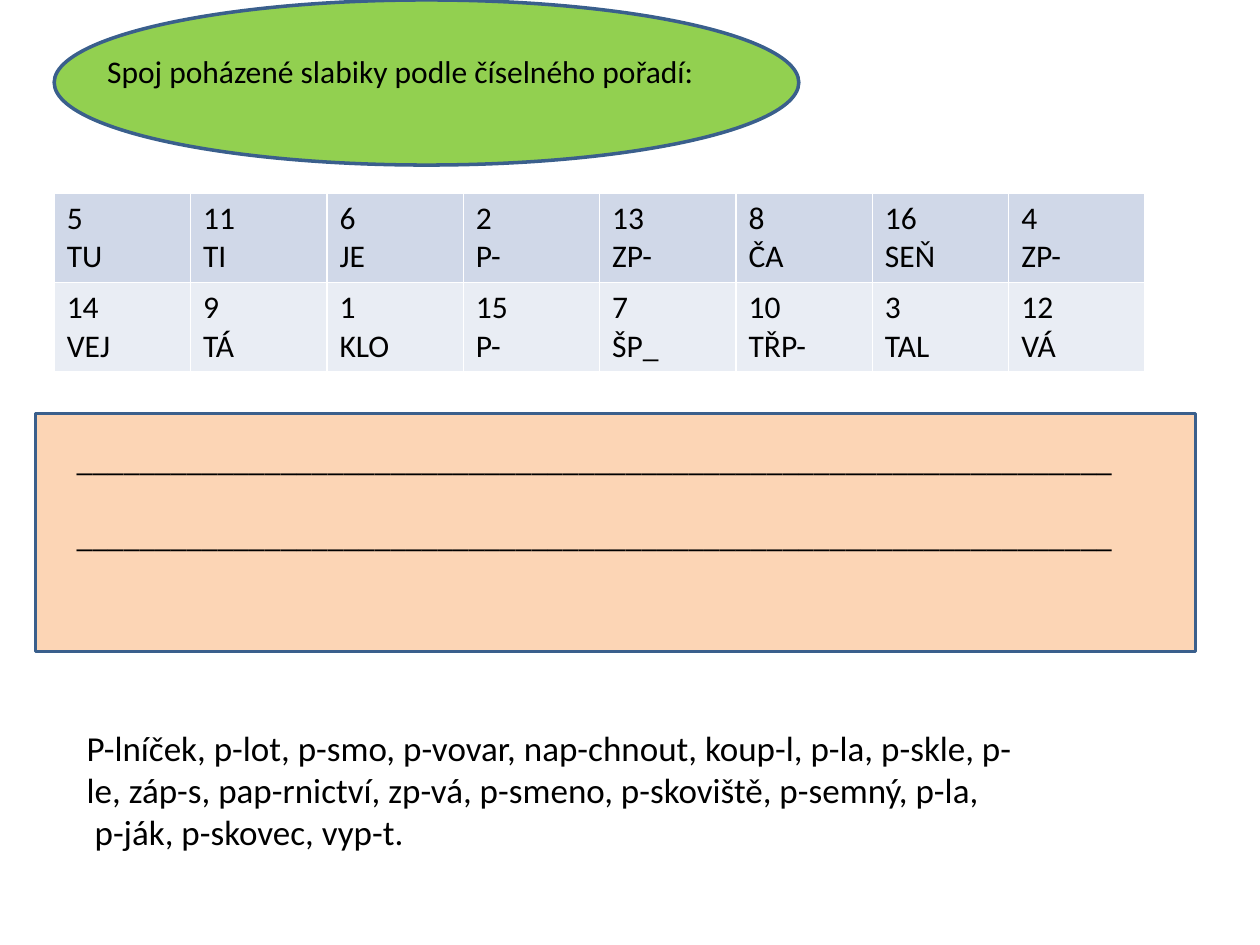
from lxml import etree
from pptx import Presentation
from pptx import util as u
from pptx.dml import color
from pptx.enum import shapes, text
from pptx.oxml import ns

FONT = {"name": "Calibri", "bold": False}
SYLLABLES = [
    [("5", "TU"), ("11", "TI"), ("6", "JE"), ("2", "P-"),
     ("13", "ZP-"), ("8", "ČA"), ("16", "SEŇ"), ("4", "ZP-")],
    [("14", "VEJ"), ("9", "TÁ"), ("1", "KLO"), ("15", "P-"),
     ("7", "ŠP_"), ("10", "TŘP-"), ("3", "TAL"), ("12", "VÁ")],
]
ROW_FILLS = ["D0D8E8", "E9EDF4"]
WORDS = [
    "P-lníček, p-lot, p-smo, p-vovar, nap-chnout, koup-l, p-la, p-skle, "
    "p-le, záp-s, pap-rnictví, zp-vá, p-smeno, p-skoviště, p-semný, p-la,",
    " p-ják, p-skovec, vyp-t.",
]


def set_attributes(target, values):
    for name, value in values.items():
        setattr(target, name, value)


def paint(fill, hex_color):
    fill.solid()
    fill.fore_color.rgb = color.RGBColor.from_string(hex_color)


def box_of(left, top, width, height):
    return dict(left=u.Inches(left), top=u.Inches(top),
                width=u.Inches(width), height=u.Inches(height))


def write(frame, lines, size=18, gap=0):
    frame.text = "\n".join(lines)
    for paragraph in frame.paragraphs:
        set_attributes(paragraph, {"alignment": text.PP_ALIGN.LEFT,
                                   "space_before": u.Pt(0)})
        set_attributes(paragraph.font, {**FONT, "size": u.Pt(size)})
        paint(paragraph.font.fill, "000000")
    for paragraph in frame.paragraphs[:-1]:
        paragraph.space_after = u.Pt(gap)


def format_frame(frame):
    set_attributes(frame, {"word_wrap": True,
                           "vertical_anchor": text.MSO_ANCHOR.TOP,
                           "auto_size": text.MSO_AUTO_SIZE.NONE})


def add_panel(slide, kind, box, fill):
    shape = slide.shapes.add_shape(kind, **box)
    shape.shadow.inherit = False
    paint(shape.fill, fill)
    paint(shape.line.fill, "3A5F8C")
    shape.line.width = u.Pt(2)


def add_text(slide, box, lines, **layout):
    frame = slide.shapes.add_textbox(**box).text_frame
    format_frame(frame)
    write(frame, lines, **layout)


def add_heading(slide, panel_box, title_box):
    add_panel(slide, shapes.MSO_SHAPE.OVAL, panel_box, "92D050")
    title = slide.shapes.title
    set_attributes(title, title_box)
    format_frame(title.text_frame)
    write(title.text_frame, ["Spoj poházené slabiky podle číselného pořadí:"])
    title.element.getparent().append(title.element)


def add_cell_borders(cell):
    properties = cell._tc.get_or_add_tcPr()
    for side in ("lnL", "lnR", "lnT", "lnB"):
        line = etree.SubElement(properties, ns.qn(f"a:{side}"), w=str(u.Pt(1)))
        fill = etree.SubElement(line, ns.qn("a:solidFill"))
        etree.SubElement(fill, ns.qn("a:srgbClr"), val="FFFFFF")


def add_syllable_table(slide, box):
    rows, columns = len(SYLLABLES), len(SYLLABLES[0])
    table = slide.shapes.add_table(rows, columns, **box).table
    set_attributes(table, {"first_row": False, "horz_banding": False})
    for row, (syllables, fill) in enumerate(zip(SYLLABLES, ROW_FILLS)):
        for column, lines in enumerate(syllables):
            cell = table.cell(row, column)
            add_cell_borders(cell)
            paint(cell.fill, fill)
            write(cell.text_frame, lines)


def add_answer_area(slide, panel_box, lines_box):
    add_panel(slide, shapes.MSO_SHAPE.RECTANGLE, panel_box, "FCD5B5")
    add_text(slide, lines_box, ["_" * 66] * 2, gap=22)


def main():
    presentation = Presentation()
    set_attributes(presentation, {"slide_width": u.Inches(10),
                                  "slide_height": u.Inches(7.5)})
    slide = presentation.slides.add_slide(presentation.slide_layouts[5])
    add_heading(slide, box_of(0.43, 0, 5.91, 1.31), box_of(0.75, 0.36, 5.2, 0.4))
    add_syllable_table(slide, box_of(0.43, 1.53, 8.66, 1.4))
    add_answer_area(slide, box_of(0.28, 3.28, 9.21, 1.89),
                    box_of(0.51, 3.44, 8.5, 1.01))
    add_text(slide, box_of(0.59, 5.72, 7.8, 1.11), WORDS, size=20)
    presentation.save("out.pptx")


if __name__ == "__main__":
    main()
